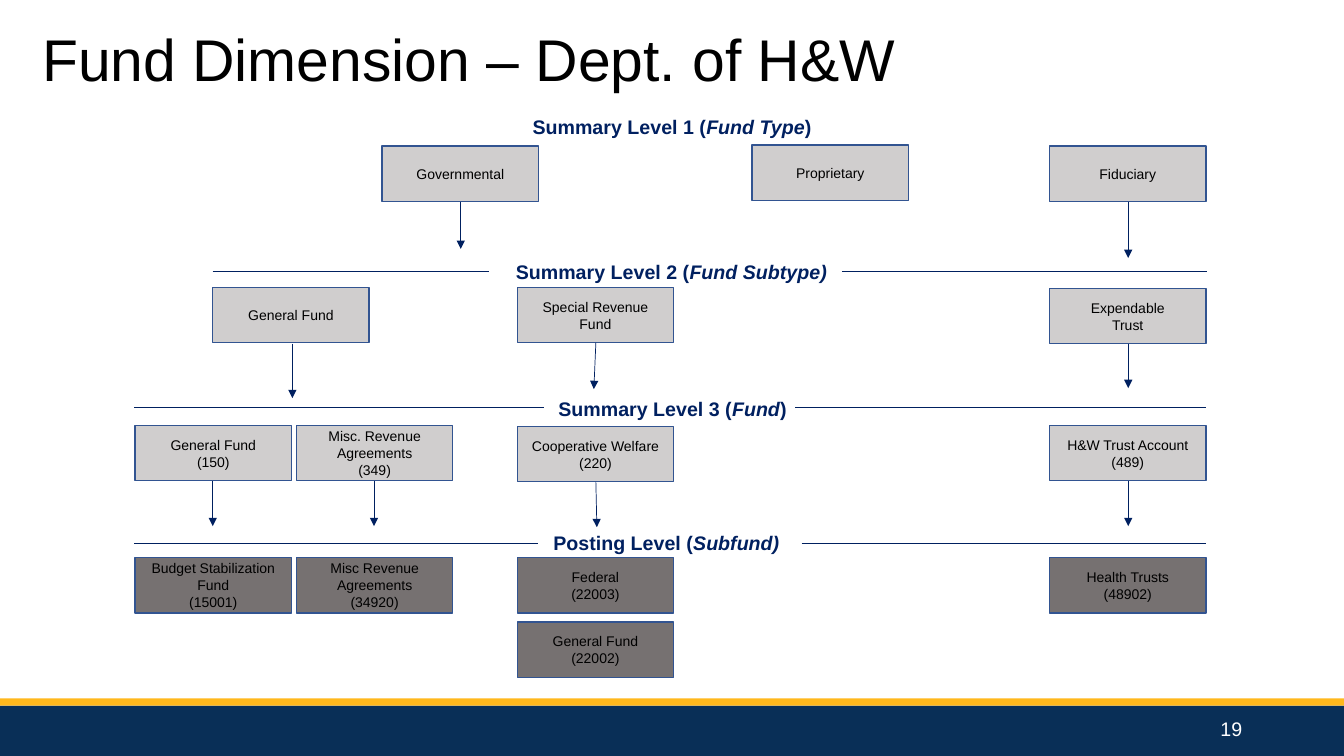
from dataclasses import dataclass

from lxml import etree
from pptx import Presentation
from pptx import util as u
from pptx.dml import color as c
from pptx.enum import shapes, text
from pptx.oxml import ns


@dataclass(frozen=True)
class Theme:
    font: str = "Arial"
    black: str = "000000"
    white: str = "FFFFFF"
    navy: str = "002060"
    border: str = "325491"
    summary: str = "D0CECE"
    posting: str = "767171"
    footer: str = "092F57"
    gold: str = "FFB81C"
    title_size: int = 42
    heading_size: int = 14
    box_size: int = 10
    border_width: float = 1
    rule_width: float = 0.5


class FundPage:
    box_width = 1.55
    box_height = 0.55

    def __init__(self, page, theme):
        self.page = page
        self.theme = theme

    def apply(self, target, values):
        for name, value in values.items():
            setattr(target, name, value)

    def fill_text(self, frame, paragraphs, size, color, align, anchor, bold=False):
        self.apply(frame, {"word_wrap": True, "vertical_anchor": anchor})
        for index, spans in enumerate(paragraphs):
            para = frame.add_paragraph() if index else frame.paragraphs[0]
            para.alignment = align
            for content, italic in spans:
                span = para.add_run()
                span.text = content
                self.apply(span.font, {"name": self.theme.font, "size": u.Pt(size),
                                       "bold": bold, "italic": italic})
                span.font.color.rgb = c.RGBColor.from_string(color)

    def band(self, left, top, width, height, fill):
        shape = self.page.shapes.add_shape(
            shapes.MSO_SHAPE.RECTANGLE,
            *map(u.Inches, (left, top, width, height)))
        shape.shadow.inherit = False
        shape.fill.solid()
        shape.fill.fore_color.rgb = c.RGBColor.from_string(fill)
        shape.line.fill.background()
        return shape

    def box(self, left, top, lines, fill):
        shape = self.band(left, top, self.box_width, self.box_height, fill)
        shape.line.color.rgb = c.RGBColor.from_string(self.theme.border)
        shape.line.width = u.Pt(self.theme.border_width)
        self.fill_text(shape.text_frame, [[(line, False)] for line in lines],
                       self.theme.box_size, self.theme.black,
                       text.PP_ALIGN.CENTER, text.MSO_ANCHOR.MIDDLE)

    def label(self, left, top, width, height, spans, size, color,
              align, anchor=text.MSO_ANCHOR.TOP, bold=False):
        box = self.page.shapes.add_textbox(
            *map(u.Inches, (left, top, width, height)))
        self.fill_text(box.text_frame, [spans], size, color, align, anchor, bold)

    def heading(self, left, top, width, height, spans):
        self.label(left, top, width, height, spans, self.theme.heading_size,
                   self.theme.navy, text.PP_ALIGN.CENTER, bold=True)

    def rule(self, start, end):
        line = self.page.shapes.add_connector(
            shapes.MSO_CONNECTOR.STRAIGHT, *map(u.Inches, start + end))
        line.line.color.rgb = c.RGBColor.from_string(self.theme.navy)
        line.line.width = u.Pt(self.theme.rule_width)
        etree.SubElement(line.element.spPr, ns.qn("a:effectLst"))
        return line

    def arrow(self, start, end):
        line = self.rule(start, end)
        outline = line.element.spPr.find(ns.qn("a:ln"))
        etree.SubElement(outline, ns.qn("a:tailEnd"), type="triangle")


SUBFUND_LEFT, AGREEMENT_LEFT, WELFARE_LEFT, TRUST_LEFT = 1.34, 2.94, 5.13, 10.41

SUMMARY_BOXES = [
    (3.79, 1.45, ["Governmental"]),
    (7.46, 1.44, ["Proprietary"]),
    (TRUST_LEFT, 1.45, ["Fiduciary"]),
    (2.11, 2.85, ["General Fund"]),
    (WELFARE_LEFT, 2.85, ["Special Revenue Fund"]),
    (TRUST_LEFT, 2.86, ["Expendable", "Trust"]),
    (SUBFUND_LEFT, 4.22, ["General Fund", "(150)"]),
    (AGREEMENT_LEFT, 4.22, ["Misc. Revenue Agreements", "(349)"]),
    (WELFARE_LEFT, 4.23, ["Cooperative Welfare", "(220)"]),
    (TRUST_LEFT, 4.22, ["H&W Trust Account", "(489)"]),
]
POSTING_BOXES = [
    (SUBFUND_LEFT, 5.53, ["Budget Stabilization Fund", "(15001)"]),
    (AGREEMENT_LEFT, 5.53, ["Misc Revenue Agreements", "(34920)"]),
    (WELFARE_LEFT, 5.53, ["Federal", "(22003)"]),
    (WELFARE_LEFT, 6.17, ["General Fund", "(22002)"]),
    (TRUST_LEFT, 5.53, ["Health Trusts", "(48902)"]),
]
HEADINGS = [
    (5.16, 1.09, 3.01, 0.57,
     [("Summary Level 1 (", False), ("Fund Type", True), (")", False)]),
    (4.98, 2.53, 3.36, 0.34,
     [("Summary Level 2 (", False), ("Fund Subtype)", True)]),
    (5.42, 3.89, 2.5, 0.57,
     [("Summary Level 3 (", False), ("Fund", True), (")", False)]),
    (5.36, 5.22, 2.5, 0.57,
     [("Posting Level (", False), ("Subfund)", True)]),
]
ARROWS = [
    ((4.57, 2), (4.57, 2.47)),
    ((11.19, 2), (11.19, 2.56)),
    ((2.9, 3.41), (2.9, 3.95)),
    ((5.91, 3.4), (5.89, 3.86)),
    ((11.19, 3.41), (11.19, 3.85)),
    ((2.11, 4.77), (2.11, 5.22)),
    ((3.71, 4.77), (3.71, 5.22)),
    ((5.91, 4.78), (5.92, 5.23)),
    ((11.19, 4.77), (11.19, 5.22)),
]
LEVEL_RULES = [
    (2.69, 2.11, 4.85, 8.35, 11.97),
    (4.04, 1.33, 5.4, 7.89, 11.96),
    (5.39, 1.33, 5.34, 7.95, 11.96),
]


def main():
    deck = Presentation()
    deck.slide_width, deck.slide_height = u.Inches(13.33), u.Inches(7.5)
    theme = Theme()
    chart = FundPage(deck.slides.add_slide(deck.slide_layouts[6]), theme)

    chart.band(0, 7, 13.33, 0.5, theme.footer)
    chart.band(0, 6.93, 13.33, 0.07, theme.gold)
    for boxes, fill in ((SUMMARY_BOXES, theme.summary), (POSTING_BOXES, theme.posting)):
        for left, top, lines in boxes:
            chart.box(left, top, lines, fill)
    for start, end in ARROWS:
        chart.arrow(start, end)
    for heading in HEADINGS:
        chart.heading(*heading)
    for top, left, gap_start, gap_end, right in LEVEL_RULES:
        chart.rule((left, top), (gap_start, top))
        chart.rule((gap_end, top), (right, top))
    chart.label(0.32, 0.16, 9.84, 0.81, [("Fund Dimension – Dept. of H&W", False)],
                theme.title_size, theme.black, text.PP_ALIGN.LEFT,
                text.MSO_ANCHOR.BOTTOM)
    chart.label(9.42, 7.06, 3, 0.4, [("19", False)], theme.heading_size,
                theme.white, text.PP_ALIGN.RIGHT)
    deck.save("out.pptx")


if __name__ == "__main__":
    main()
